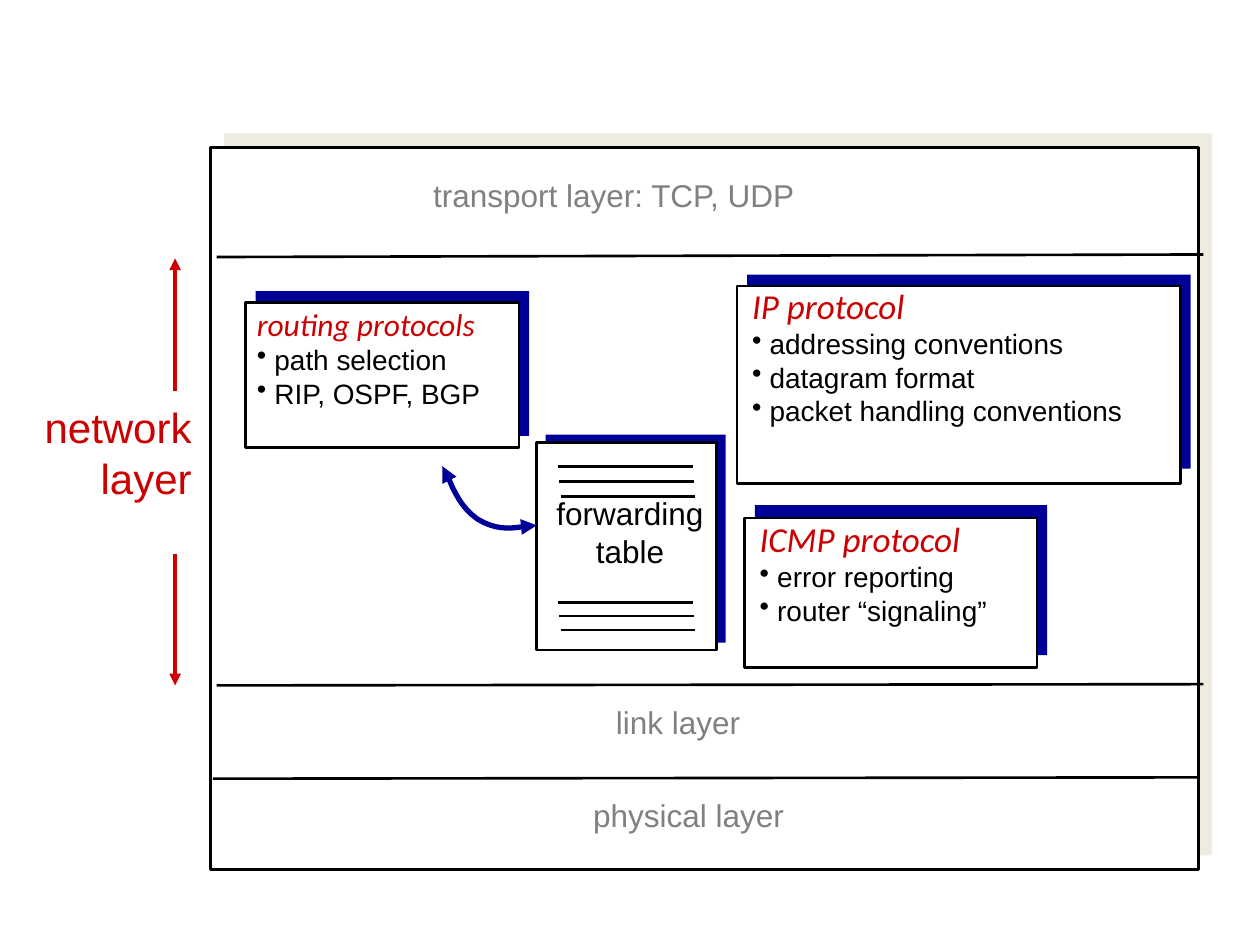
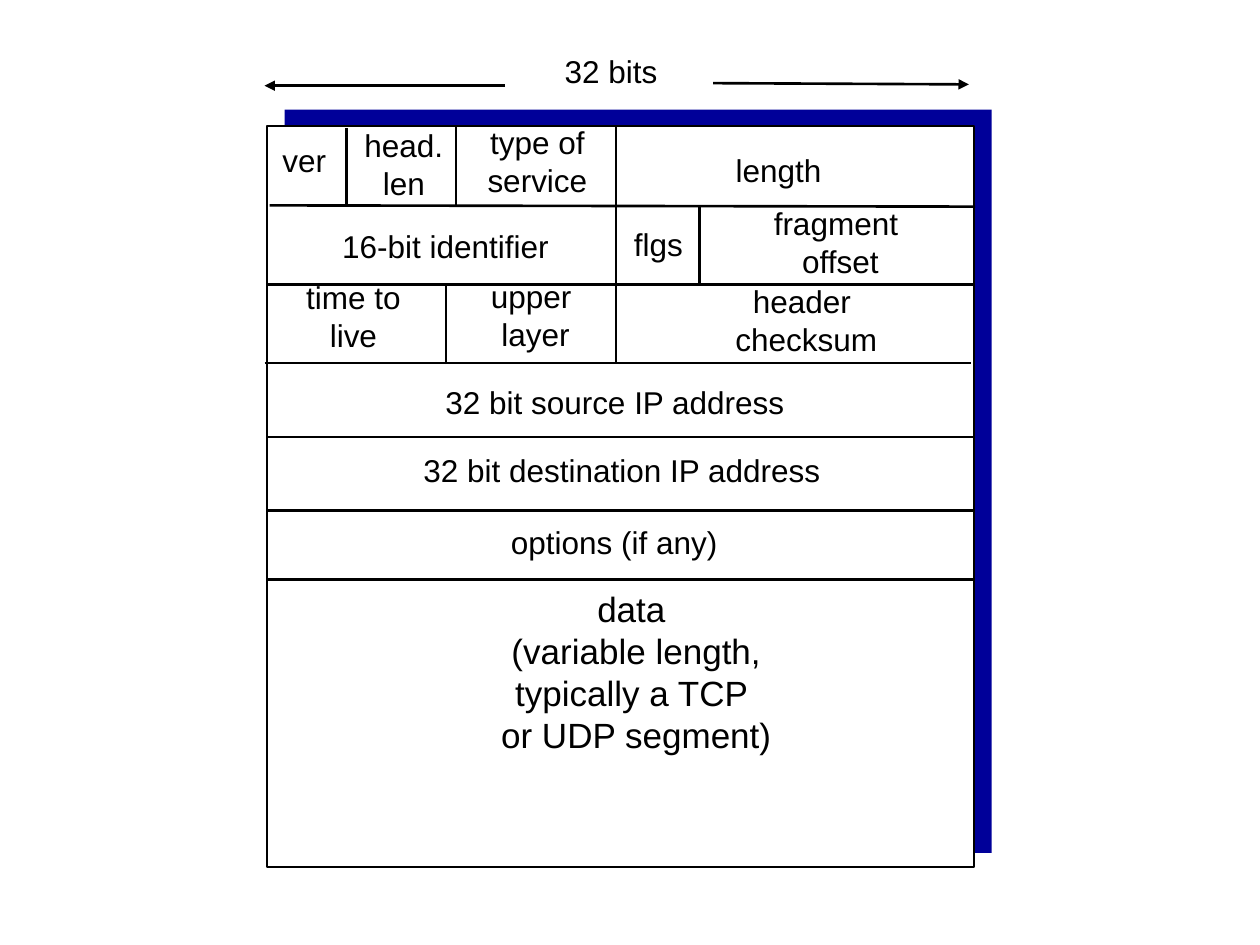
from dataclasses import dataclass
from typing import NamedTuple

from lxml.etree import SubElement as sub_element
from pptx import Presentation
from pptx.dml.color import RGBColor as Rgb
from pptx.enum.shapes import MSO_CONNECTOR as Connector, MSO_SHAPE as Shape
from pptx.enum.text import MSO_ANCHOR as Anchor, MSO_AUTO_SIZE as AutoSize, PP_ALIGN as Align
from pptx.oxml.ns import qn
from pptx.util import Emu, Pt

PX = 9144  # one px is a hundredth of an inch
BLANK_LAYOUT = 6
BULLET_INDENT = 14


@dataclass(frozen=True)
class Theme:
    ink: Rgb = Rgb(0, 0, 0)
    paper: Rgb = Rgb(255, 255, 255)
    navy: Rgb = Rgb(0, 0, 0x99)
    red: Rgb = Rgb(0xCC, 0, 0)
    gray: Rgb = Rgb(0x80, 0x80, 0x80)
    cream: Rgb = Rgb(0xEE, 0xEC, 0xE1)
    body_font: str = "Arial"
    heading_font: str = "Calibri"
    bullet_size: int = 16
    label_size: int = 18
    large_size: int = 20
    side_size: int = 24
    thin: float = 1.5
    medium: float = 2.25
    thick: float = 3


THEME = Theme()


class Box(NamedTuple):
    left: int
    top: int
    width: int
    height: int


class Style(NamedTuple):
    size: int = THEME.label_size
    color: Rgb = THEME.ink
    font: str = THEME.body_font
    italic: bool = False
    align: Align = Align.CENTER


class Label(NamedTuple):
    lines: tuple[str, ...]
    box: Box
    style: Style = Style()
    wrap: bool = False


class Panel(NamedTuple):
    """A white framed rectangle and the coloured one behind it."""
    back: Box
    front: Box
    back_color: Rgb = THEME.navy


class Card(NamedTuple):
    panel: Panel
    text_box: Box
    heading: str
    heading_size: int
    bullets: tuple[str, ...]
    wrap: bool = False


class Stroke(NamedTuple):
    start: tuple[int, int]
    end: tuple[int, int]
    color: Rgb = THEME.ink
    weight: float = THEME.thin
    arrow: bool = False


GRAY_LABEL = Style(color=THEME.gray, align=Align.LEFT)
SIDE_LABEL = Style(THEME.side_size, THEME.red, align=Align.RIGHT)
BULLET = Style(THEME.bullet_size, align=Align.LEFT)
DATA_LABEL = Style(THEME.large_size)

STACK = Panel(Box(178, 106, 784, 573), Box(167, 117, 784, 573), THEME.cream)
TABLE = Panel(Box(433, 345, 143, 165), Box(426, 351, 143, 165))
TABLE_LABEL = Label(("forwarding", "table"), Box(425, 387, 150, 90))
TABLE_RULES = [
    Stroke((443 + step, top + gap * step), (550 + step, top + gap * step))
    for top, gap in ((370, 12), (478, 11))
    for step in range(3)
]
LAYER_RULES = [
    Stroke((169, 618), (950, 617)),
    Stroke((172, 544), (955, 543)),
    Stroke((172, 204), (955, 202)),
]
SPAN_ARROWS = [
    Stroke((139, start), (139, end), THEME.red, THEME.medium, True)
    for start, end in ((310, 205), (440, 544))
]
CARDS = [
    Card(Panel(Box(203, 231, 217, 115), Box(195, 240, 217, 115)),
         Box(194, 237, 223, 120), "routing protocols", THEME.label_size,
         ("path selection", "RIP, OSPF, BGP")),
    Card(Panel(Box(593, 218, 352, 154), Box(585, 227, 352, 157)),
         Box(587, 221, 345, 159), "IP protocol", THEME.large_size,
         ("addressing conventions", "datagram format", "packet handling conventions")),
    Card(Panel(Box(599, 401, 232, 119), Box(591, 411, 232, 119)),
         Box(593, 406, 228, 125), "ICMP protocol", THEME.large_size,
         ("error reporting", "router “signaling”"), wrap=True),
]
LAYER_LABELS = [
    Label(("transport layer: TCP, UDP",), Box(334, 135, 310, 40), GRAY_LABEL),
    Label(("link layer",), Box(479, 553, 120, 40), GRAY_LABEL),
    Label(("physical layer",), Box(461, 627, 173, 40), GRAY_LABEL),
    Label(("network", "layer"), Box(12, 314, 150, 116), SIDE_LABEL),
]
ROUTING_CURVE = [
    ((351, 370), (356, 374), (359, 398), (379, 412)),
    ((379, 412), (400, 425), (416, 416), (426, 417)),
]

DATAGRAM = Panel(Box(226, 87, 561, 590), Box(212, 100, 561, 588))
FIELD_HEIGHT = 62
FIELD_RULES = [Stroke((214, 163), (774, 164)), Stroke((210, 288), (771, 288))] + [
    Stroke((213, top), (774, top)) for top in (226, 347, 405, 460)
]
FIELD_DIVIDERS = [
    Stroke((left, top + FIELD_HEIGHT), (left, top))
    for left, top in ((275, 102), (362, 101), (489, 101), (489, 164),
                      (555, 163), (489, 226), (354, 227))
]
WIDTH_ARROWS = [
    Stroke((566, 66), (769, 67), arrow=True),
    Stroke((401, 68), (210, 68), arrow=True),
]
FIELD_LABELS = [
    Label(("32 bits",), Box(424, 36, 122, 45)),
    Label(("ver",), Box(206, 107, 71, 45)),
    Label(("head.", "len"), Box(267, 95, 107, 78)),
    Label(("type of", "service"), Box(362, 93, 129, 78)),
    Label(("length",), Box(561, 115, 114, 45)),
    Label(("16-bit identifier",), Box(201, 175, 305, 45), wrap=True),
    Label(("flgs",), Box(468, 174, 109, 45), wrap=True),
    Label(("fragment", " offset"), Box(562, 157, 203, 78), wrap=True),
    Label(("time to", "live"), Box(219, 216, 123, 78)),
    Label(("upper", " layer"), Box(367, 215, 109, 78)),
    Label(("header", " checksum"), Box(546, 219, 181, 78)),
    Label(("32 bit source IP address",), Box(300, 299, 376, 45)),
    Label(("32 bit destination IP address",), Box(276, 353, 435, 45)),
    Label(("options (if any)",), Box(368, 410, 239, 45)),
    Label(("data ", "(variable length,", "typically a TCP ", "or UDP segment)"),
          Box(353, 461, 304, 160), DATA_LABEL),
]


def emu(*lengths: float) -> list[Emu]:
    return [Emu(round(length * PX)) for length in lengths]


def apply_format(target, values: dict) -> None:
    for name, value in values.items():
        setattr(target, name, value)


def set_line(shape, color: Rgb, weight: float, arrows: tuple[str, ...] = ()) -> None:
    """Colour the line; arrows holds headEnd and tailEnd in that order."""
    shape.line.color.rgb = color
    shape.line.width = Pt(weight)
    line = shape.element.spPr.find(qn("a:ln"))
    for end in arrows:
        sub_element(line, qn(f"a:{end}")).set("type", "triangle")


def add_rectangle(page, box: Box, fill: Rgb, framed: bool) -> None:
    shape = page.shapes.add_shape(Shape.RECTANGLE, *emu(*box))
    shape.shadow.inherit = False
    shape.fill.solid()
    shape.fill.fore_color.rgb = fill
    if framed:
        set_line(shape, THEME.ink, THEME.thin)
    else:
        shape.line.fill.background()


def add_panel(page, panel: Panel) -> None:
    add_rectangle(page, panel.back, panel.back_color, framed=False)
    add_rectangle(page, panel.front, THEME.paper, framed=True)


def add_strokes(page, strokes: list[Stroke]) -> None:
    for stroke in strokes:
        line = page.shapes.add_connector(
            Connector.STRAIGHT, *emu(*stroke.start, *stroke.end))
        set_line(line, stroke.color, stroke.weight, ("tailEnd",) if stroke.arrow else ())
        sub_element(line.element.spPr, qn("a:effectLst"))


def add_text_frame(page, box: Box, wrap: bool):
    frame = page.shapes.add_textbox(*emu(*box)).text_frame
    apply_format(frame, {"word_wrap": wrap, "vertical_anchor": Anchor.TOP,
                         "auto_size": AutoSize.SHAPE_TO_FIT_TEXT})
    return frame


def write_lines(frame, lines: list[tuple[str, Style, bool]]) -> None:
    """Write one paragraph per (text, style, bulleted) entry."""
    for index, (text, style, bulleted) in enumerate(lines):
        para = frame.add_paragraph() if index else frame.paragraphs[0]
        para.alignment = style.align
        if bulleted:
            indent = emu(BULLET_INDENT)[0]
            properties = para._p.get_or_add_pPr()
            properties.set("marL", str(indent))
            properties.set("indent", str(-indent))
            sub_element(properties, qn("a:buChar")).set("char", "•")
        span = para.add_run()
        span.text = text
        apply_format(span.font, {"name": style.font, "size": Pt(style.size),
                                 "italic": style.italic})
        span.font.color.rgb = style.color


def add_labels(page, labels: list[Label]) -> None:
    for label in labels:
        frame = add_text_frame(page, label.box, label.wrap)
        write_lines(frame, [(line, label.style, False) for line in label.lines])


def add_card(page, card: Card) -> None:
    add_panel(page, card.panel)
    heading = Style(card.heading_size, THEME.red, THEME.heading_font, True, Align.LEFT)
    lines = [(card.heading, heading, False)]
    lines += [(text, BULLET, True) for text in card.bullets]
    write_lines(add_text_frame(page, card.text_box, card.wrap), lines)


def bezier_points(controls, steps: int = 12) -> list[tuple[float, float]]:
    """Points along a cubic curve, without its start."""
    points = []
    for step in range(1, steps + 1):
        t = step / steps
        weights = ((1 - t) ** 3, 3 * t * (1 - t) ** 2, 3 * t * t * (1 - t), t ** 3)
        points.append(tuple(
            sum(weight * value for weight, value in zip(weights, axis))
            for axis in zip(*controls)))
    return points


def add_routing_curve(page) -> None:
    builder = page.shapes.build_freeform(*emu(*ROUTING_CURVE[0][0]))
    points = [point for part in ROUTING_CURVE for point in bezier_points(part)]
    builder.add_line_segments([emu(*point) for point in points], close=False)
    curve = builder.convert_to_shape()
    curve.shadow.inherit = False
    curve.fill.background()
    set_line(curve, THEME.navy, THEME.thick, ("headEnd", "tailEnd"))


def build_network_layer(page) -> None:
    add_panel(page, STACK)
    add_panel(page, TABLE)
    add_labels(page, [TABLE_LABEL])
    add_strokes(page, TABLE_RULES + LAYER_RULES)
    for card in CARDS:
        add_card(page, card)
    add_routing_curve(page)
    add_labels(page, LAYER_LABELS)
    add_strokes(page, SPAN_ARROWS)


def build_datagram_format(page) -> None:
    add_panel(page, DATAGRAM)
    add_strokes(page, FIELD_RULES + FIELD_DIVIDERS + WIDTH_ARROWS)
    add_labels(page, FIELD_LABELS)


def main() -> None:
    deck = Presentation()
    deck.slide_width, deck.slide_height = emu(1000, 750)
    for build in (build_network_layer, build_datagram_format):
        build(deck.slides.add_slide(deck.slide_layouts[BLANK_LAYOUT]))
    deck.save("out.pptx")


if __name__ == "__main__":
    main()
